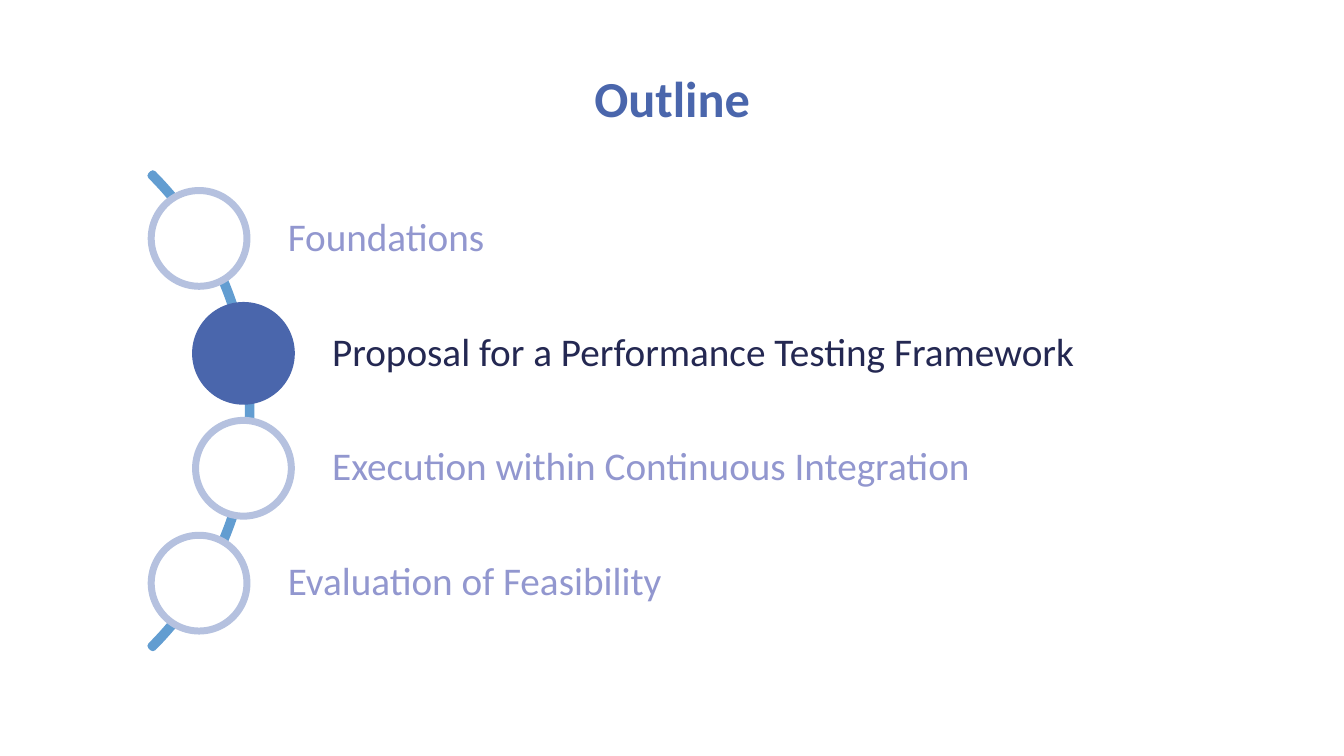
from pptx import Presentation
from pptx.dml.color import RGBColor
from pptx.enum import shapes, text
from pptx import util as u

COLORS = {
    "white": "FFFFFF",
    "accent": "4A66AC",
    "arc": "629DD1",
    "ring": "B5C1DF",
    "active": "242852",
    "muted": "9297CF",
}
CHAPTERS = [
    ("Foundations", 142.2, False),
    ("Proposal for a Performance Testing Framework", 173.9, True),
    ("Execution within Continuous Integration", 173.9, False),
    ("Evaluation of Feasibility", 142.2, False),
]
FIRST_MIDDLE = 170.3
PITCH = 82.08
CIRCLE_SIZE = 68.4
LABEL_HEIGHT = 54.7
LABEL_RIGHT = 873.3


class OutlineSlide:
    font = "Calibri"
    line_spacing = 0.9

    def __init__(self, deck):
        self.page = deck.slides.add_slide(deck.slide_layouts[5])

    def color(self, name):
        return RGBColor.from_string(COLORS[name])

    def set_words(self, box, words, size, color, align, anchor, bold=False):
        frame = box.text_frame
        frame.text = words
        frame.word_wrap = True
        frame.auto_size = text.MSO_AUTO_SIZE.NONE
        frame.vertical_anchor = anchor
        para = frame.paragraphs[0]
        para.alignment = align
        para.line_spacing = self.line_spacing
        span = para.runs[0]
        span.font.name = self.font
        span.font.size = u.Pt(size)
        span.font.bold = bold
        span.font.color.rgb = self.color(color)

    def title(self, words, left, top, width, height):
        box = self.page.shapes.title
        box.left, box.top = u.Pt(left), u.Pt(top)
        box.width, box.height = u.Pt(width), u.Pt(height)
        self.set_words(box, words, 36, "accent", text.PP_ALIGN.CENTER,
                       text.MSO_ANCHOR.BOTTOM, bold=True)

    def shape(self, kind, left, top, width, height, line, weight, fill=None):
        box = self.page.shapes.add_shape(
            kind, u.Pt(left), u.Pt(top), u.Pt(width), u.Pt(height))
        box.shadow.inherit = False
        if fill:
            box.fill.solid()
            box.fill.fore_color.rgb = self.color(fill)
        else:
            box.fill.background()
        box.line.color.rgb = self.color(line)
        box.line.width = u.Pt(weight)
        return box

    def arc(self, left, top, size):
        box = self.shape(shapes.MSO_SHAPE.BLOCK_ARC, left, top, size, size,
                         "arc", 5)
        for index, value in enumerate((189, 27, 0.004)):
            box.adjustments[index] = value

    def label(self, words, left, middle, color):
        box = self.shape(shapes.MSO_SHAPE.RECTANGLE, left,
                         middle - LABEL_HEIGHT / 2, LABEL_RIGHT - left,
                         LABEL_HEIGHT, "white", 1)
        frame = box.text_frame
        frame.margin_left = u.Pt(43.4)
        frame.margin_right = frame.margin_top = frame.margin_bottom = u.Pt(5.6)
        self.set_words(box, words, 28, color, text.PP_ALIGN.LEFT,
                       text.MSO_ANCHOR.MIDDLE)

    def circle(self, center, middle, fill, line):
        self.shape(shapes.MSO_SHAPE.OVAL, center - CIRCLE_SIZE / 2,
                   middle - CIRCLE_SIZE / 2, CIRCLE_SIZE, CIRCLE_SIZE,
                   line, 5, fill)

    def chapter(self, words, center, middle, active):
        self.label(words, center + 20, middle, "active" if active else "muted")
        self.circle(center, middle, "accent" if active else "white",
                    "accent" if active else "ring")


def main():
    deck = Presentation()
    deck.slide_width, deck.slide_height = u.Pt(960), u.Pt(540)
    outline = OutlineSlide(deck)
    outline.title("Outline", 102.2, 31, 756, 64)
    outline.arc(-299.5, 54, 478.8)
    for row, (words, center, active) in enumerate(CHAPTERS):
        outline.chapter(words, center, FIRST_MIDDLE + row * PITCH, active)
    deck.save("out.pptx")


if __name__ == "__main__":
    main()
